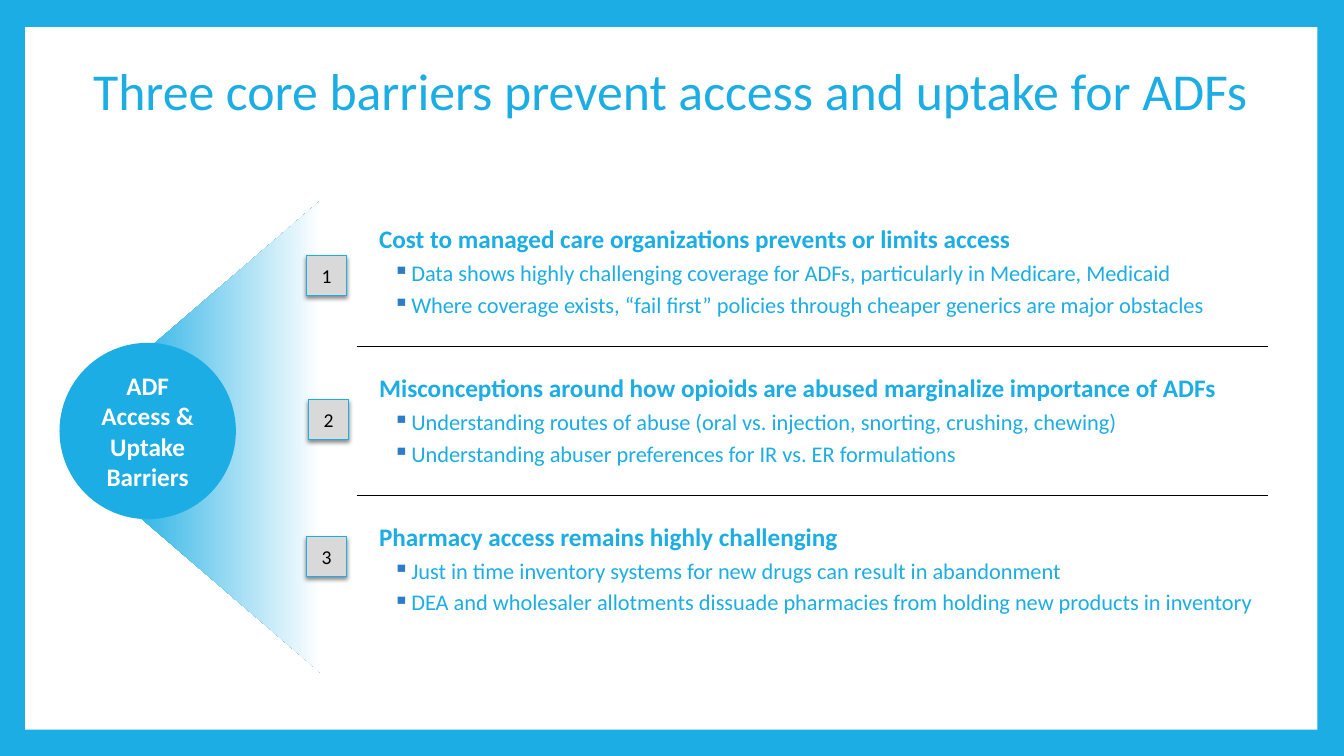
from dataclasses import dataclass

import pptx
import pptx.dml.color
import pptx.enum.shapes
import pptx.enum.text
import pptx.oxml
import pptx.oxml.ns
import pptx.util

Pt = pptx.util.Pt
RGB = pptx.dml.color.RGBColor.from_string
SHAPES = pptx.enum.shapes.MSO_SHAPE
CENTER = pptx.enum.text.PP_ALIGN.CENTER
MIDDLE = pptx.enum.text.MSO_ANCHOR.MIDDLE
NO_TABLE_STYLE = "{2D5ABB26-0587-4C30-8999-92F81FD0307C}"


@dataclass(frozen=True)
class Theme:
    """Colours, font and type sizes of the slide."""
    accent: str = "1CADE4"
    paper: str = "FFFFFF"
    ink: str = "000000"
    badge: str = "D9D9D9"
    bullet: str = "2B7DC7"
    font: str = "Calibri"
    title_size: float = 37
    heading_size: float = 18
    detail_size: float = 16
    badge_size: float = 14


THEME = Theme()
TITLE = "Three core barriers prevent access and uptake for ADFs"
HUB = "ADF Access & Uptake Barriers"
BARRIERS = [
    ("Cost to managed care organizations prevents or limits access",
     "Data shows highly challenging coverage for ADFs, particularly in Medicare, Medicaid",
     "Where coverage exists, “fail first” policies through cheaper generics are major obstacles"),
    ("Misconceptions around how opioids are abused marginalize importance of ADFs",
     "Understanding routes of abuse (oral vs. injection, snorting, crushing, chewing)",
     "Understanding abuser preferences for IR vs. ER formulations"),
    ("Pharmacy access remains highly challenging",
     "Just in time inventory systems for new drugs can result in abandonment",
     "DEA and wholesaler allotments dissuade pharmacies from holding new products in inventory"),
]
BADGE_SPOTS = [(218.9, 182.2), (220.3, 285.1), (218.9, 383)]


def add_xml(parent, markup):
    """Append a DrawingML element, given without its namespace, to parent."""
    namespace = pptx.oxml.ns.nsdecls("a")
    tag_end = min(markup.index(mark) for mark in " />" if mark in markup)
    parent.append(pptx.oxml.parse_xml(f"{markup[:tag_end]} {namespace}{markup[tag_end:]}"))


def style_text(paragraph, size, color, bold=False):
    """Format the runs of a paragraph."""
    for run in paragraph.runs:
        run.font.name = THEME.font
        run.font.size = Pt(size)
        run.font.bold = bold
        run.font.color.rgb = RGB(color)


def add_block(shapes, kind, box, color=None):
    """Add a borderless, shadowless preset shape in the box."""
    block = shapes.add_shape(kind, *map(Pt, box))
    block.shadow.inherit = False
    block.line.fill.background()
    if color:
        block.fill.solid()
        block.fill.fore_color.rgb = RGB(color)
    return block


def center_text(shape, text, size, color, bold=False):
    """Write one centred paragraph into a shape."""
    frame = shape.text_frame
    frame.word_wrap = True
    frame.vertical_anchor = MIDDLE
    frame.text = text
    frame.paragraphs[0].alignment = CENTER
    style_text(frame.paragraphs[0], size, color, bold)


def add_backdrop(slide, box):
    """Draw the coloured frame around the white page."""
    slide.background.fill.solid()
    slide.background.fill.fore_color.rgb = RGB(THEME.accent)
    add_block(slide.shapes, SHAPES.RECTANGLE, box, THEME.paper)


def add_title(slide, box):
    """Write the slide title in the box."""
    title = slide.shapes.add_textbox(*map(Pt, box))
    center_text(title, TITLE, THEME.title_size, THEME.accent)
    title.text_frame.paragraphs[0].line_spacing = 0.9


def add_hub(slide, box):
    """Draw the circle and the beam that widens from it to the right."""
    left, top, width, height = box
    diameter, beam_depth = 126, 145.4
    hub_group = slide.shapes.add_group_shape()
    beam_box = (left + width - beam_depth / 2 - height / 2,
                top + (height - beam_depth) / 2, height, beam_depth)
    beam = add_block(hub_group.shapes, SHAPES.TRAPEZOID, beam_box)
    beam.rotation = 270
    beam.adjustments[0] = 0.86
    beam.fill.gradient()
    beam.fill.gradient_angle = 270
    for stop, color in zip(beam.fill.gradient_stops, (THEME.accent, THEME.paper)):
        stop.color.rgb = RGB(color)

    circle_box = (left, top + (height - diameter) / 2 - 4, diameter, diameter)
    circle = add_block(hub_group.shapes, SHAPES.OVAL, circle_box, THEME.accent)
    frame = circle.text_frame
    frame.margin_left = frame.margin_right = Pt(3.6)
    frame.margin_top = frame.margin_bottom = Pt(3.6)
    center_text(circle, HUB, THEME.heading_size, THEME.paper, True)


def fill_barrier(cell, heading, details):
    """Write a barrier heading and its bulleted details into a cell."""
    cell.fill.background()
    cell.vertical_anchor = MIDDLE
    frame = cell.text_frame
    frame.text = "\n".join((heading, *details))
    heading_line, *detail_lines = frame.paragraphs
    properties = heading_line._p.get_or_add_pPr()
    properties.set("marL", str(Pt(9.4)))
    properties.set("indent", str(Pt(-0.7)))
    style_text(heading_line, THEME.heading_size, THEME.accent, True)
    for line in detail_lines:
        line.space_before = Pt(3.2)
        properties = line._p.get_or_add_pPr()
        properties.set("marL", str(Pt(31.7)))
        properties.set("indent", str(Pt(-13)))
        add_xml(properties, f'<a:buClr><a:srgbClr val="{THEME.bullet}"/></a:buClr>')
        add_xml(properties, '<a:buChar char="▪"/>')
        style_text(line, THEME.detail_size, THEME.accent)


def add_rule(cell, side):
    """Draw a thin border on one side of a cell."""
    properties = cell._tc.get_or_add_tcPr()
    properties.insert(0, pptx.oxml.parse_xml(
        f'<a:{side} {pptx.oxml.ns.nsdecls("a")} w="{Pt(1)}"><a:solidFill>'
        f'<a:srgbClr val="{THEME.ink}"/></a:solidFill></a:{side}>'))


def add_barriers(slide, box):
    """Build the table of barriers with rules between its rows."""
    barriers = slide.shapes.add_table(len(BARRIERS), 1, *map(Pt, box)).table
    barriers.first_row = barriers.horz_banding = False
    barriers._tbl.tblPr[0].text = NO_TABLE_STYLE
    for index, (heading, *details) in enumerate(BARRIERS):
        cell = barriers.cell(index, 0)
        fill_barrier(cell, heading, details)
        if index < len(BARRIERS) - 1:
            add_rule(cell, "lnB")
        if index > 0:
            add_rule(cell, "lnT")


def add_badge(slide, box, number):
    """Draw a numbered square with a soft shadow."""
    badge = add_block(slide.shapes, SHAPES.RECTANGLE, box, THEME.badge)
    badge.line.color.rgb = RGB(THEME.accent)
    badge.line.width = Pt(0.79)
    center_text(badge, str(number), THEME.badge_size, THEME.ink)
    effects = badge._element.spPr.find(pptx.oxml.ns.qn("a:effectLst"))
    add_xml(effects, f'<a:outerShdw blurRad="{Pt(3)}" dist="{Pt(2)}" dir="5400000" '
                     f'rotWithShape="0"><a:srgbClr val="{THEME.ink}">'
                     '<a:alpha val="45000"/></a:srgbClr></a:outerShdw>')


def main():
    """Build and save the slide."""
    deck = pptx.Presentation()
    deck.slide_width, deck.slide_height = Pt(960), Pt(540)
    slide = deck.slides.add_slide(deck.slide_layouts[6])
    add_backdrop(slide, (18, 19.4, 923, 501.8))
    add_title(slide, (27.4, 13.7, 902.9, 106.6))
    add_hub(slide, (42.5, 143, 186.8, 337.7))
    add_barriers(slide, (254.9, 141.1, 650.9, 319))
    for number, (left, top) in enumerate(BADGE_SPOTS, 1):
        add_badge(slide, (left, top, 28.8, 28.8), number)
    deck.save("out.pptx")


if __name__ == "__main__":
    main()
